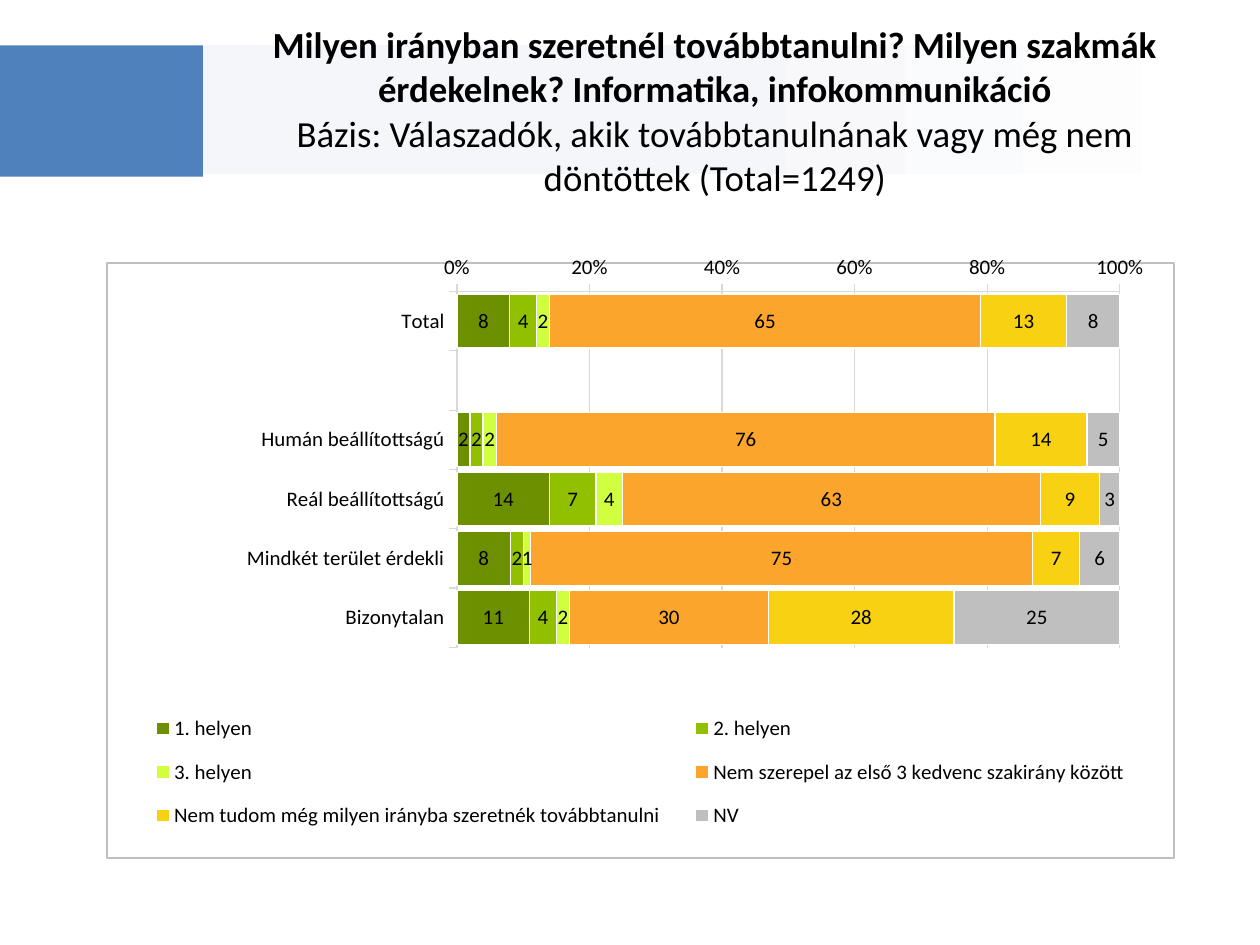
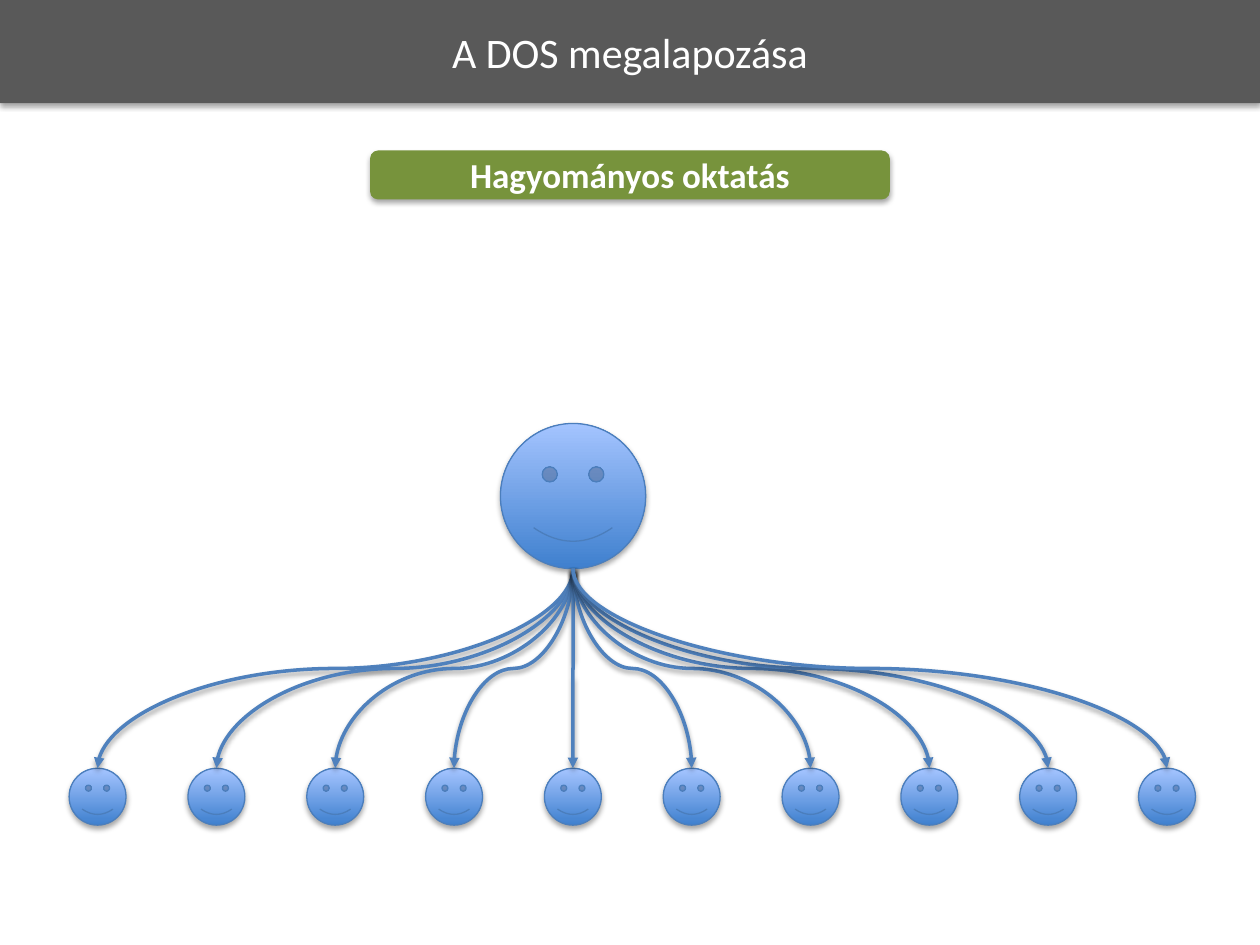
from dataclasses import dataclass
from lxml import etree
from pptx import Presentation
from pptx.chart.data import CategoryChartData
from pptx.dml.color import RGBColor
from pptx.enum import chart as ec, shapes, text
from pptx.oxml import parse_xml
from pptx.oxml.ns import nsdecls, qn
from pptx.util import Pt


@dataclass(frozen=True)
class Theme:
    face: str = "Calibri"
    blue: str = "4F81BD"
    haze: str = "F5F6FA"
    white: str = "FFFFFF"
    black: str = "000000"
    dark: str = "595959"
    green: str = "77933C"
    deep: str = "3F80CE"
    light: str = "A4C4FF"
    edge: str = "4B7EBC"
    grid: str = "D9D9D9"
    frame: str = "BFBFBF"
    head: float = 24
    pill: float = 20
    title: float = 21
    small: float = 12


T = Theme()
WIDE, HIGH = 720, 540

TITLE = [
    ("Milyen irányban szeretnél továbbtanulni? Milyen szakmák érdekelnek? Informatika, infokommunikáció", True),
    ("Bázis: Válaszadók, akik továbbtanulnának vagy még nem döntöttek (Total=1249)", False),
]
GROUPS = ["Total", "", "Humán beállítottságú", "Reál beállítottságú",
          "Mindkét terület érdekli", "Bizonytalan"]
RANKS = [
    ("1. helyen", "6D9000", (8, None, 2, 14, 8, 11)),
    ("2. helyen", "91C000", (4, None, 2, 7, 2, 4)),
    ("3. helyen", "D0FF40", (2, None, 2, 4, 1, 2)),
    ("Nem szerepel az első 3 kedvenc szakirány között", "FBA52D", (65, None, 76, 63, 75, 30)),
    ("Nem tudom még milyen irányba szeretnék továbbtanulni", "F7D112", (13, None, 14, 9, 7, 28)),
    ("NV", "BFBFBF", (8, None, 5, 3, 6, 25)),
]
HEADER = "A DOS megalapozása"
LABEL = "Hagyományos oktatás"

CHART = (60.5, 145.5, 611, 345.5)
PLOT = dict(x=0.328, y=0.048, w=0.621, h=0.598)
KEY = dict(x=0.02, y=0.73, w=0.96, h=0.25)
TUTOR = (286, 242, 83)
PUPILS = dict(count=10, left=39.5, top=439, size=32.5, step=67.9)


def rgb(code):
    return RGBColor.from_string(code)


def put(obj, **vals):
    for name, val in vals.items():
        setattr(obj, name, val)


def paint(fill, code):
    fill.solid()
    fill.fore_color.rgb = rgb(code)


def stroke(line, code, width):
    line.color.rgb = rgb(code)
    line.width = Pt(width)


def blend(fill, stops, angle):
    fill.gradient()
    fill.gradient_angle = angle
    for stop, (pos, code) in zip(fill.gradient_stops, stops):
        stop.position = pos
        stop.color.rgb = rgb(code)


def shade(props, alpha, dist):
    old = props.find(qn("a:effectLst"))
    if old is not None:
        props.remove(old)
    props.append(parse_xml(
        f'<a:effectLst {nsdecls("a")}><a:outerShdw blurRad="{Pt(3.1)}" dist="{Pt(dist)}" '
        f'dir="5400000" rotWithShape="0"><a:srgbClr val="{T.black}">'
        f'<a:alpha val="{alpha * 1000}"/></a:srgbClr></a:outerShdw></a:effectLst>'))


def block(slide, kind, box, fill=None, shadow=True):
    shape = slide.shapes.add_shape(kind, *map(Pt, box))
    shape.shadow.inherit = False
    shape.line.fill.background()
    if fill:
        paint(shape.fill, fill)
    if shadow:
        shade(shape._element.spPr, 35, 1.8)
    return shape


def write(shape, parts, size, code):
    frame = shape.text_frame
    put(frame, word_wrap=True, vertical_anchor=text.MSO_ANCHOR.MIDDLE)
    for i, (words, bold) in enumerate(parts):
        para = frame.paragraphs[0] if i == 0 else frame.add_paragraph()
        para.alignment = text.PP_ALIGN.CENTER
        run = para.add_run()
        run.text = words
        put(run.font, name=T.face, size=Pt(size), bold=bold)
        run.font.color.rgb = rgb(code)


def place(node, spot, inner=False):
    for old in node.findall(qn("c:layout")):
        node.remove(old)
    target = '<c:layoutTarget val="inner"/>' if inner else ""
    modes = "".join(f'<c:{k}Mode val="edge"/>' for k in "xy")
    sizes = "".join(f'<c:{k} val="{v}"/>' for k, v in spot.items())
    layout = parse_xml(f'<c:layout {nsdecls("c")}><c:manualLayout>{target}{modes}{sizes}'
                       '</c:manualLayout></c:layout>')
    if inner:
        node.insert(0, layout)
    else:
        node.find(qn("c:legendPos")).addnext(layout)


def graph(slide):
    data = CategoryChartData()
    data.categories = GROUPS
    for name, _, vals in RANKS:
        data.add_series(name, vals)
    chart = slide.shapes.add_chart(
        ec.XL_CHART_TYPE.BAR_STACKED_100, *map(Pt, CHART), data).chart
    put(chart, has_title=False, has_legend=True)
    put(chart.font, name=T.face, size=Pt(T.small))
    chart.font.color.rgb = rgb(T.black)
    put(chart.legend, position=ec.XL_LEGEND_POSITION.BOTTOM, include_in_layout=False)

    plot = chart.plots[0]
    put(plot, gap_width=10, overlap=100, vary_by_categories=False)
    for bar, (_, code, _) in zip(plot.series, RANKS):
        paint(bar.format.fill, code)
        stroke(bar.format.line, T.white, 0.75)
        put(bar.data_labels, show_value=True, number_format="#,##0",
            number_format_is_linked=False, position=ec.XL_LABEL_POSITION.CENTER)

    rows, scale = chart.category_axis, chart.value_axis
    for axis in (rows, scale):
        put(axis, major_tick_mark=ec.XL_TICK_MARK.OUTSIDE,
            minor_tick_mark=ec.XL_TICK_MARK.NONE)
        stroke(axis.format.line, T.grid, 0.75)
    put(rows, reverse_order=True, crosses=ec.XL_AXIS_CROSSES.MAXIMUM)
    put(scale, major_unit=0.2, minimum_scale=0, maximum_scale=1, has_major_gridlines=True)
    stroke(scale.major_gridlines.format.line, T.grid, 0.75)
    put(scale.tick_labels, number_format="0%", number_format_is_linked=False)

    root = chart._chartSpace.find(qn("c:chart"))
    place(root.find(qn("c:plotArea")), PLOT, True)
    place(root.find(qn("c:legend")), KEY)
    root.addnext(parse_xml(
        f'<c:spPr {nsdecls("c", "a")}><a:noFill/><a:ln w="{Pt(1)}"><a:solidFill>'
        f'<a:srgbClr val="{T.frame}"/></a:solidFill></a:ln></c:spPr>'))


def smile(slide, left, top, size):
    face = block(slide, shapes.MSO_SHAPE.SMILEY_FACE, (left, top, size, size))
    blend(face.fill, [(0, T.deep), (1, T.light)], 90)
    stroke(face.line, T.edge, 0.75)
    return face


def curve(slide, tutor, pupil):
    x1, y1 = tutor.left.pt + tutor.width.pt / 2, tutor.top.pt + tutor.height.pt
    x2, y2 = pupil.left.pt + pupil.width.pt / 2, pupil.top.pt
    drop, span = y2 - y1, abs(x2 - x1)
    midx, midy = (x1 + x2) / 2, (y1 + y2) / 2
    side, turn = (1, 90) if x2 < x1 else (-1, 270)
    ends = (midx - side * drop / 2, midy - span / 2, midx + side * drop / 2, midy + span / 2)
    link = slide.shapes.add_connector(shapes.MSO_CONNECTOR.CURVE, *map(Pt, ends))
    stroke(link.line, T.blue, 2)
    node = link._element
    props = node.spPr
    props.find(qn("a:xfrm")).set("rot", str(turn * 60000))
    etree.SubElement(props.find(qn("a:ln")), qn("a:tailEnd"), type="triangle")
    shade(props, 38, 1.6)
    joint = node.find(".//" + qn("p:cNvCxnSpPr"))
    for tag, shape, site in (("a:stCxn", tutor, 4), ("a:endCxn", pupil, 0)):
        etree.SubElement(joint, qn(tag), id=str(shape.shape_id), idx=str(site))


def survey(slide):
    rect = shapes.MSO_SHAPE.RECTANGLE
    block(slide, rect, (0, 26, 116, 75), T.blue, False)
    band = block(slide, rect, (116, 26, WIDE - 116, 73.5), shadow=False)
    blend(band.fill, [(0.44, T.haze), (1, T.white)], 0)
    box = slide.shapes.add_textbox(*map(Pt, (145, 18, 527, 90)))
    write(box, TITLE, T.title, T.black)
    graph(slide)


def lesson(slide):
    head = block(slide, shapes.MSO_SHAPE.RECTANGLE, (0, 0, WIDE, 59), T.dark)
    write(head, [(HEADER, False)], T.head, T.white)
    pill = block(slide, shapes.MSO_SHAPE.ROUNDED_RECTANGLE, (211.5, 86, 297, 28), T.green)
    write(pill, [(LABEL, True)], T.pill, T.white)
    row = PUPILS
    class_ = [smile(slide, row["left"] + i * row["step"], row["top"], row["size"])
              for i in range(row["count"])]
    tutor = smile(slide, *TUTOR)
    for pupil in class_:
        curve(slide, tutor, pupil)


def main():
    deck = Presentation()
    put(deck, slide_width=Pt(WIDE), slide_height=Pt(HIGH))
    for build in (survey, lesson):
        build(deck.slides.add_slide(deck.slide_layouts[6]))
    deck.save("out.pptx")


if __name__ == "__main__":
    main()
